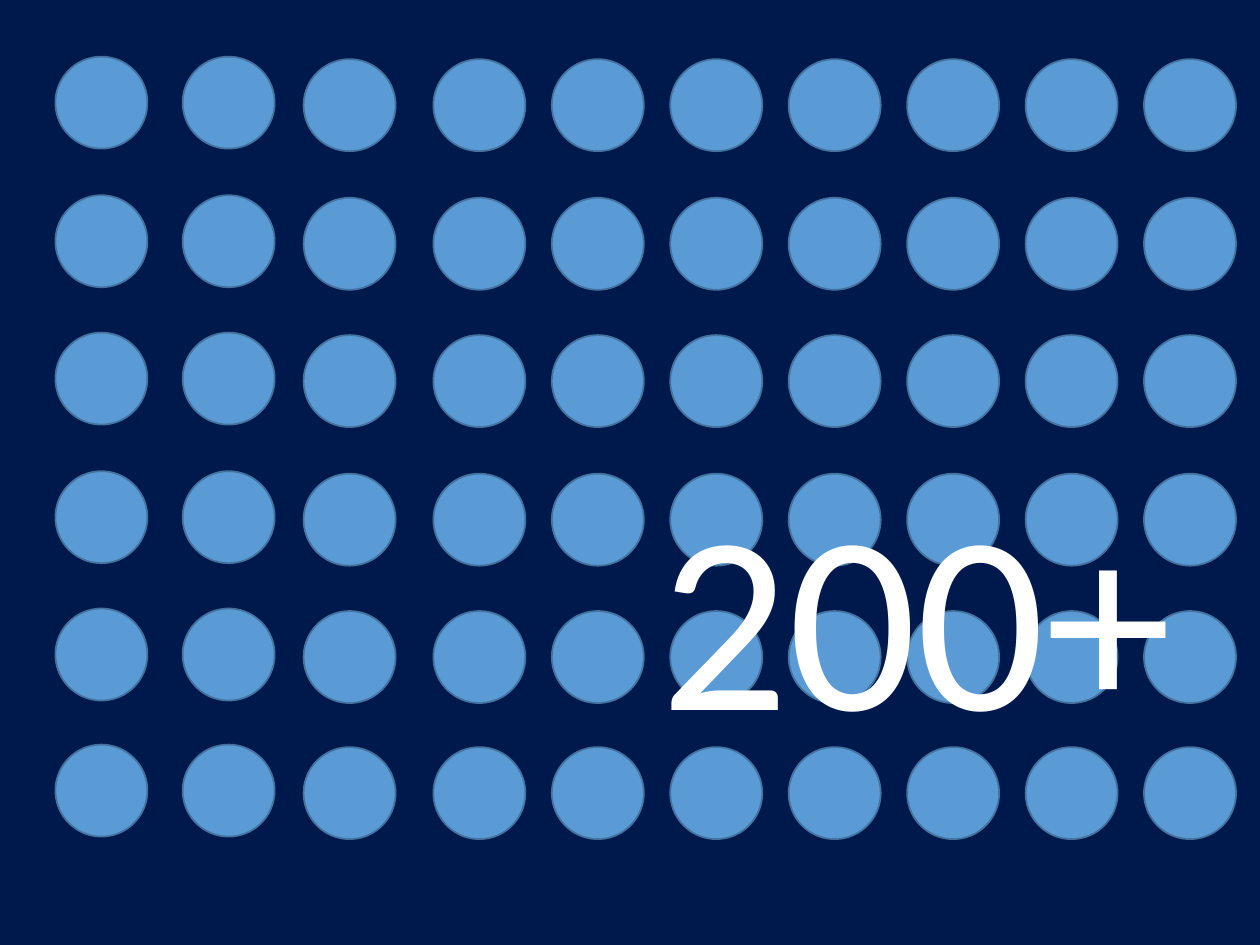
from pptx import Presentation
from pptx.dml.color import RGBColor
from pptx.enum.shapes import MSO_SHAPE as Shape
from pptx.enum.text import MSO_AUTO_SIZE as AutoSize
from pptx.util import Inches, Pt

NAVY = RGBColor(0x00, 0x19, 0x4C)
SKY = RGBColor(0x5B, 0x9B, 0xD5)
STEEL = RGBColor(0x43, 0x73, 0x9E)
WHITE = RGBColor(0xFF, 0xFF, 0xFF)

DIAMETER = 0.73
COLUMN_LEFTS = [0.44, 1.45, 2.41] + [3.44 + 0.94 * step for step in range(7)]
ROW_TOPS = [0.45, 1.55, 2.64, 3.74, 4.83, 5.91]
RAISED_COLUMNS = 2
COLUMN_DROP = 0.02
COUNT_FORMAT = {"name": "Calibri", "size": Pt(145)}


def paint_background(slide, color):
    """Fill the slide background with one colour."""
    fill = slide.background.fill
    fill.solid()
    fill.fore_color.rgb = color


def add_dot(slide, left, top):
    """Add one outlined circle."""
    dot = slide.shapes.add_shape(
        Shape.OVAL, Inches(left), Inches(top), Inches(DIAMETER), Inches(DIAMETER)
    )
    dot.shadow.inherit = False
    dot.fill.solid()
    dot.fill.fore_color.rgb = SKY
    dot.line.color.rgb = STEEL
    dot.line.width = Pt(1)


def add_dot_grid(slide):
    """Add the rows of dots, with the first columns slightly raised."""
    for top in ROW_TOPS:
        for column, left in enumerate(COLUMN_LEFTS):
            drop = 0 if column < RAISED_COLUMNS else COLUMN_DROP
            add_dot(slide, left, top + drop)


def add_count(slide, text):
    """Add the large count over the dots."""
    box = slide.shapes.add_textbox(
        Inches(5.14), Inches(3.58), Inches(5.42), Inches(2.54)
    )
    frame = box.text_frame
    frame.word_wrap = True
    frame.auto_size = AutoSize.SHAPE_TO_FIT_TEXT
    span = frame.paragraphs[0].add_run()
    span.text = text
    for name, value in COUNT_FORMAT.items():
        setattr(span.font, name, value)
    span.font.color.rgb = WHITE


def main():
    """Build and save the slide."""
    deck = Presentation()
    deck.slide_width, deck.slide_height = Inches(10), Inches(7.5)
    slide = deck.slides.add_slide(deck.slide_layouts[6])
    paint_background(slide, NAVY)
    add_dot_grid(slide)
    add_count(slide, "200+")
    deck.save("out.pptx")


if __name__ == "__main__":
    main()
